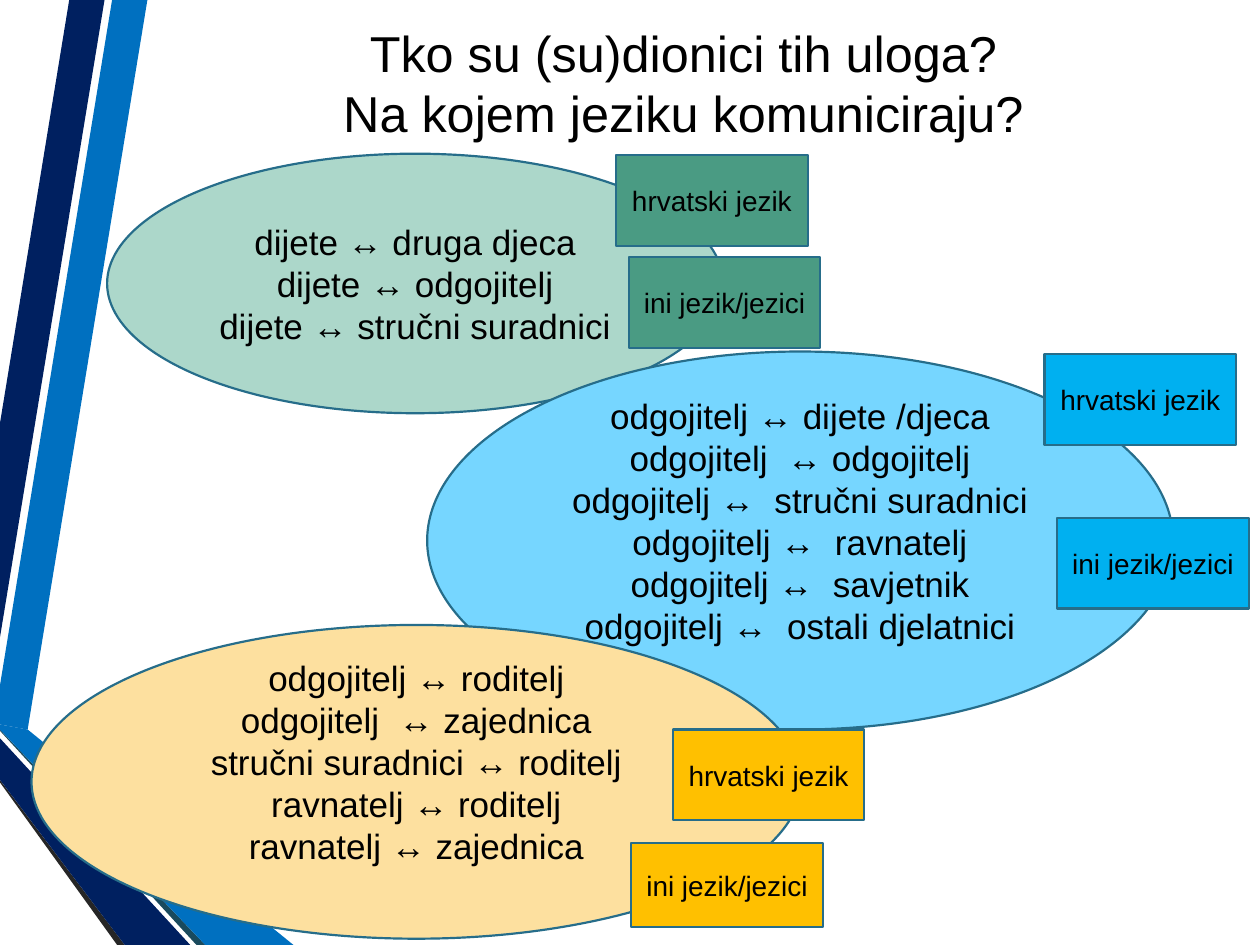
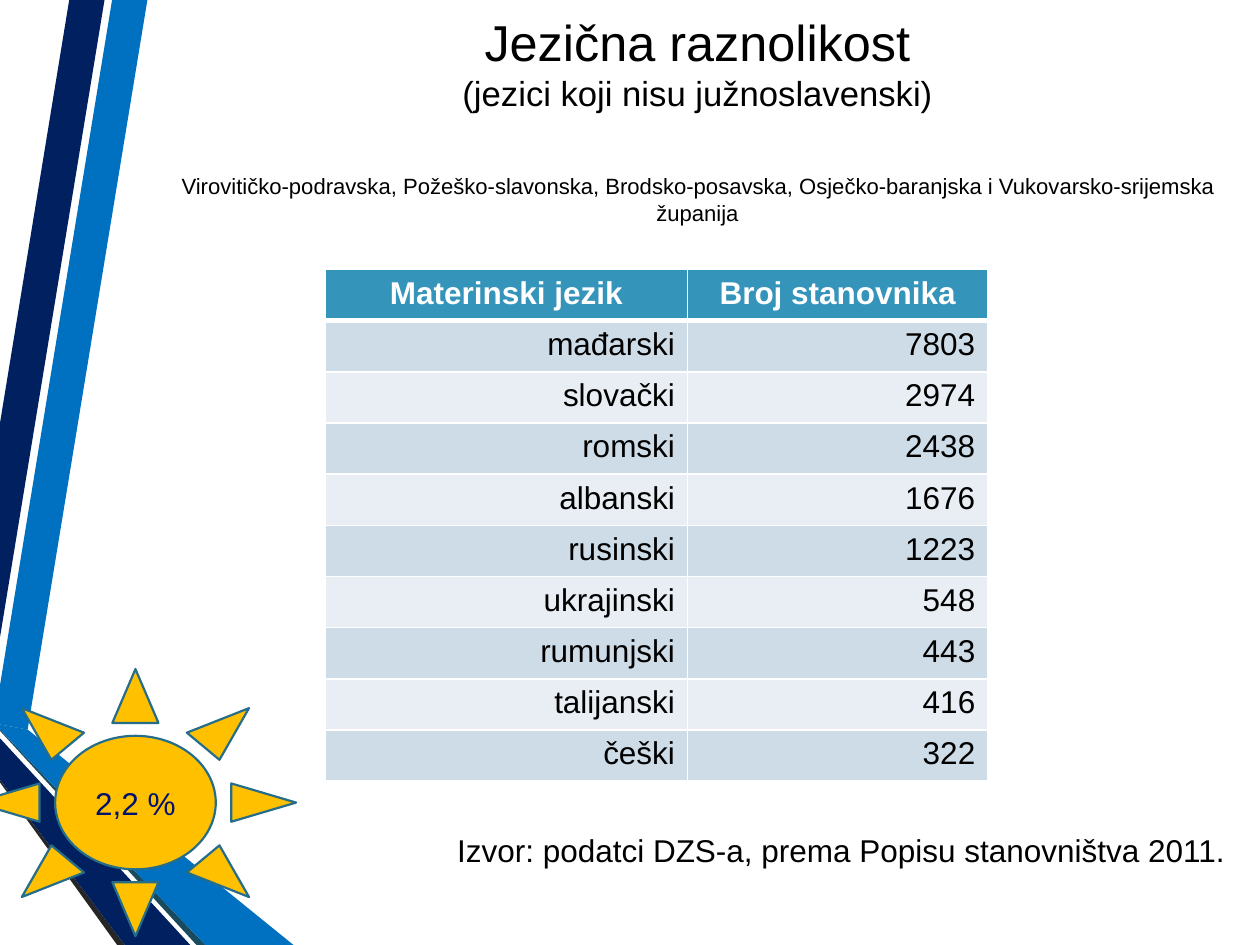
from dataclasses import dataclass

from lxml import etree
from pptx import Presentation
from pptx import util as u
from pptx.dml import color
from pptx.enum import shapes as kinds, text
from pptx.oxml import ns


@dataclass(frozen=True)
class Theme:
    font: str = "Arial"
    ink: str = "000000"
    paper: str = "FFFFFF"
    outline: str = "266D8A"
    blue: str = "0070C0"
    navy: str = "002060"
    charcoal: str = "262626"
    petrol: str = "1A4A5D"
    sun: str = "FFC000"
    sun_ink: str = "01126E"
    header: str = "3494BA"
    bands: tuple = ("CEDCE7", "E8EEF3")
    title: float = 28.8
    subtitle: float = 19.8
    counties: float = 12.6
    roles: float = 20
    body: float = 18
    tag: float = 16
    line: float = 1.25


THEME = Theme()
CENTER, RIGHT, LEFT = (text.PP_ALIGN.CENTER, text.PP_ALIGN.RIGHT,
                       text.PP_ALIGN.LEFT)

RIBBONS = [
    (THEME.blue, [(0, 5.44), (0, 5.75), (0.22, 5.79), (1.17, 0), (0.89, 0)]),
    (THEME.navy, [(0.83, 0), (0.55, 0), (0, 3.36), (0, 5.06)]),
    (THEME.charcoal, [(0, 6.19), (0, 6.21), (0.93, 7.5), (0.99, 7.5)]),
    (THEME.petrol, [(0, 5.79), (0, 5.8), (1.56, 7.5), (1.63, 7.5)]),
    (THEME.blue, [(0, 5.79), (1.63, 7.5), (2.33, 7.5), (0.22, 5.79),
                  (0, 5.75)]),
    (THEME.navy, [(0, 6.19), (0.99, 7.5), (1.51, 7.5), (0, 5.86)]),
]

CHILD_ROLES = [
    "dijete ↔ druga djeca",
    "dijete ↔ odgojitelj",
    "dijete ↔ stručni suradnici",
]
EDUCATOR_ROLES = [
    "odgojitelj ↔ dijete /djeca",
    "odgojitelj  ↔ odgojitelj",
    "odgojitelj ↔  stručni suradnici",
    "odgojitelj ↔  ravnatelj",
    "odgojitelj ↔  savjetnik",
    "odgojitelj ↔  ostali djelatnici",
]
COMMUNITY_ROLES = [
    "odgojitelj ↔ roditelj",
    "odgojitelj  ↔ zajednica",
    "stručni suradnici ↔ roditelj",
    "ravnatelj ↔ roditelj",
    "ravnatelj ↔ zajednica",
]
TAG_LABELS = ("hrvatski jezik", "ini jezik/jezici")

ROLE_GROUPS = [
    ((0.85, 1.22, 4.89, 2.06), CHILD_ROLES, "ACD7CA", "4A9B83", 0.05,
     [(4.04, 0.01, 1.52, 0.72), (4.14, 0.82, 1.52, 0.72)]),
    ((3.39, 2.79, 5.92, 3), EDUCATOR_ROLES, "76D6FF", "00B0F0", 0.37,
     [(4.9, 0.02, 1.52, 0.72), (5, 1.32, 1.52, 0.72)]),
    ((0.25, 4.96, 6.11, 2.49), COMMUNITY_ROLES, "FDE09F", THEME.sun, 0.37,
     [(5.09, 0.83, 1.52, 0.72), (4.76, 1.73, 1.52, 0.67)]),
]

SPEAKERS = [
    ("Materinski jezik", "Broj stanovnika"),
    ("mađarski", "7803"),
    ("slovački", "2974"),
    ("romski", "2438"),
    ("albanski", "1676"),
    ("rusinski", "1223"),
    ("ukrajinski", "548"),
    ("rumunjski", "443"),
    ("talijanski", "416"),
    ("češki", "322"),
]


def rgb(code):
    return color.RGBColor.from_string(code)


def inches(box):
    return [u.Inches(length) for length in box]


def assign(target, values):
    for attribute, value in values.items():
        setattr(target, attribute, value)


def paint(shape, fill, outline=None):
    shape.shadow.inherit = False
    shape.fill.solid()
    shape.fill.fore_color.rgb = rgb(fill)
    if outline:
        shape.line.color.rgb = rgb(outline)
        shape.line.width = u.Pt(THEME.line)
    else:
        shape.line.fill.background()


def write(frame, lines, size, ink=THEME.ink, align=CENTER, bold=False):
    for number, line in enumerate(lines):
        paragraph = frame.add_paragraph() if number else frame.paragraphs[0]
        paragraph.alignment = align
        run = paragraph.add_run()
        run.text = line
        assign(run.font, {"name": THEME.font, "size": u.Pt(size),
                          "bold": bold})
        run.font.color.rgb = rgb(ink)


def add_label(slide, kind, box, lines, fill, size, ink=THEME.ink, bottom=0.05):
    label = slide.shapes.add_shape(kind, *inches(box))
    paint(label, fill, THEME.outline)
    assign(label.text_frame, {
        "word_wrap": True,
        "vertical_anchor": text.MSO_ANCHOR.MIDDLE,
        "margin_bottom": u.Inches(bottom),
    })
    write(label.text_frame, lines, size, ink)


def add_title(slide, box, lines):
    title = slide.shapes.title
    assign(title, dict(zip(("left", "top", "width", "height"), inches(box))))
    frame = title.text_frame
    assign(frame, {"word_wrap": True, "auto_size": text.MSO_AUTO_SIZE.NONE,
                   "vertical_anchor": text.MSO_ANCHOR.MIDDLE})
    write(frame, [line for line, _, _ in lines], THEME.title)
    for paragraph, (_, size, gap) in zip(frame.paragraphs, lines):
        paragraph.space_before = u.Pt(gap)
        paragraph.runs[0].font.size = u.Pt(size)


def move_ribbons_to_layout(slide, layout):
    for number, (fill, corners) in enumerate(RIBBONS):
        start, *rest = [inches(corner) for corner in corners]
        builder = slide.shapes.build_freeform(*start, scale=1.0)
        builder.add_line_segments(rest, close=True)
        ribbon = builder.convert_to_shape()
        paint(ribbon, fill)
        ribbon.element.nvSpPr.cNvPr.set("id", str(20 + number))
        layout.shapes.element.insert(2 + number, ribbon.element)


def add_role_group(slide, box, roles, fill, tag_fill, bottom, tags):
    kind = kinds.MSO_SHAPE
    left, top = box[:2]
    add_label(slide, kind.OVAL, box, roles, fill, THEME.roles, bottom=bottom)
    for label, (dx, dy, width, height) in zip(TAG_LABELS, tags):
        add_label(slide, kind.RECTANGLE, (left + dx, top + dy, width, height),
                  [label], tag_fill, THEME.tag)


def add_border(cell, side, points):
    properties = cell._tc.get_or_add_tcPr()
    edge = etree.Element(ns.qn("a:" + side), w=str(u.Pt(points)))
    fill = etree.SubElement(edge, ns.qn("a:solidFill"))
    etree.SubElement(fill, ns.qn("a:srgbClr"), val=THEME.paper)
    properties.append(edge)


def add_speaker_table(slide, box):
    table = slide.shapes.add_table(len(SPEAKERS), 2, *inches(box)).table
    table.horz_banding = False
    for column, share in zip(table.columns, (0.547, 0.453)):
        column.width = u.Inches(box[2] * share)
    for row, values in enumerate(SPEAKERS):
        header = row == 0
        for column, value in enumerate(values):
            cell = table.cell(row, column)
            for side in ("lnL", "lnR", "lnT", "lnB"):
                thick = (header and side == "lnB") or (row == 1
                                                       and side == "lnT")
                add_border(cell, side, 3 if thick else 1)
            cell.fill.solid()
            cell.fill.fore_color.rgb = rgb(
                THEME.header if header else THEME.bands[(row - 1) % 2])
            write(cell.text_frame, [value], THEME.body,
                  THEME.paper if header else THEME.ink,
                  CENTER if header else RIGHT, header)


def add_source_note(slide, box):
    note = slide.shapes.add_textbox(*inches(box)).text_frame
    note.word_wrap = True
    write(note, ["Izvor: podatci DZS-a, prema Popisu stanovništva 2011."],
          THEME.body, align=LEFT)


def build_roles(slide):
    add_title(slide, (1.21, 0.08, 8.43, 1.15), [
        ("Tko su (su)dionici tih uloga?", THEME.title, 0),
        ("Na kojem jeziku komuniciraju?", THEME.title, 0),
    ])
    for group in ROLE_GROUPS:
        add_role_group(slide, *group)


def build_diversity(slide):
    add_title(slide, (1.07, 0, 8.93, 1.88), [
        ("Jezična raznolikost", THEME.title, 0),
        ("(jezici koji nisu južnoslavenski)", THEME.subtitle, 0),
        ("Virovitičko-podravska, Požeško-slavonska, Brodsko-posavska, "
         "Osječko-baranjska i Vukovarsko-srijemska županija",
         THEME.counties, 34),
    ])
    add_speaker_table(slide, (2.58, 2.14, 5.26, 4.06))
    add_source_note(slide, (3.53, 6.55, 6.47, 0.4))
    add_label(slide, kinds.MSO_SHAPE.SUN, (-0.2, 5.31, 2.55, 2.12),
              ["2,2 %"], THEME.sun, THEME.body, THEME.sun_ink)


def main():
    deck = Presentation()
    assign(deck, {"slide_width": u.Inches(10), "slide_height": u.Inches(7.5)})
    title_only = deck.slide_layouts[5]
    roles, diversity = [deck.slides.add_slide(title_only) for _ in range(2)]
    move_ribbons_to_layout(roles, title_only)
    build_roles(roles)
    build_diversity(diversity)
    deck.save("out.pptx")


if __name__ == "__main__":
    main()
